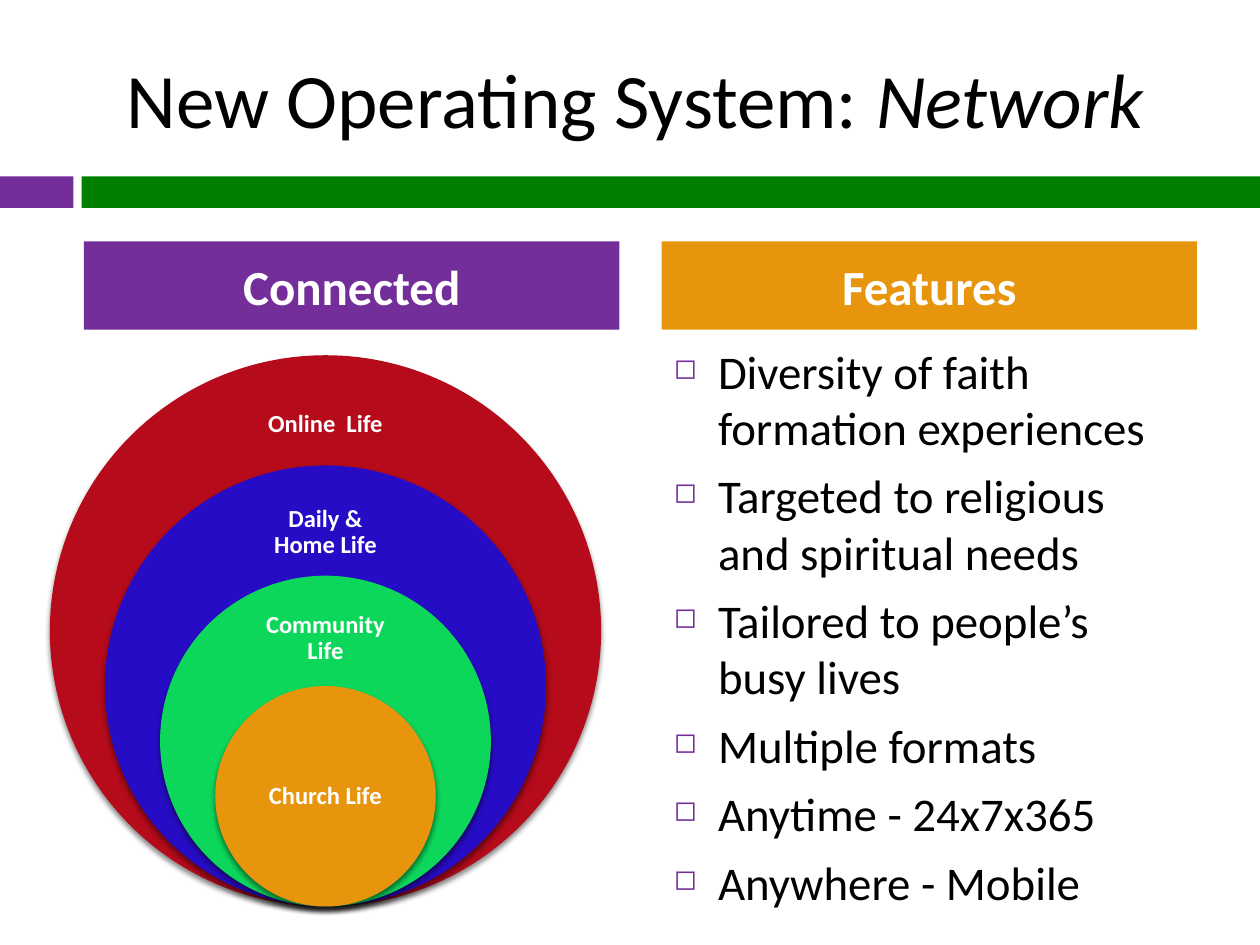
from lxml import etree
from pptx import Presentation
from pptx.dml.color import RGBColor
from pptx.enum import shapes, text
from pptx.oxml import parse_xml
from pptx.oxml.ns import nsdecls, qn
from pptx.util import Pt

PURPLE = RGBColor(0x73, 0x2E, 0x9A)
GREEN = RGBColor(0x00, 0x80, 0x00)
ORANGE = RGBColor(0xE8, 0x95, 0x0E)
RED = RGBColor(0xB5, 0x0B, 0x1B)
BLUE = RGBColor(0x27, 0x0C, 0xC6)
LIME = RGBColor(0x0D, 0xD7, 0x5A)
BLACK = RGBColor(0, 0, 0)
WHITE = RGBColor(0xFF, 0xFF, 0xFF)

deck = Presentation()
deck.slide_width, deck.slide_height = Pt(720), Pt(540)
page = deck.slides.add_slide(deck.slide_layouts[6])


def add_filled(kind, left, top, width, height, color):
    shape = page.shapes.add_shape(kind, Pt(left), Pt(top), Pt(width), Pt(height))
    shape.shadow.inherit = False
    shape.fill.solid()
    shape.fill.fore_color.rgb = color
    shape.line.fill.background()
    return shape


def write(shape, content, size, color, bold=False, align=text.PP_ALIGN.CENTER):
    frame = shape.text_frame
    frame.word_wrap = True
    frame.vertical_anchor = text.MSO_ANCHOR.MIDDLE
    frame.text = content
    for para in frame.paragraphs:
        para.alignment = align
        for span in para.runs:
            span.font.name = "Calibri"
            span.font.size = Pt(size)
            span.font.bold = bold
            span.font.color.rgb = color
    return frame


RECT = shapes.MSO_SHAPE.RECTANGLE
add_filled(RECT, 0, 100.8, 42, 18, PURPLE)
add_filled(RECT, 46.6, 100.8, 673.4, 18, GREEN)

title = page.shapes.add_textbox(Pt(42), Pt(21.6), Pt(642), Pt(68.4))
para = write(title, "New Operating System: ", 44, BLACK).paragraphs[0]
span = para.add_run()
span.text = "Network"
span.font.name = "Calibri"
span.font.size = Pt(44)
span.font.italic = True
span.font.color.rgb = BLACK

CENTER_X, BOTTOM, LARGEST = 186, 518, 315
rings = [
    ("Online  Life", RED, 219, 47.5),
    ("Daily & Home Life", BLUE, 281.7, 45),
    ("Community Life", LIME, 343.5, 42.5),
    ("Church Life", ORANGE, 423.5, 63),
]
for index, (label, color, label_top, label_height) in enumerate(rings):
    size = LARGEST * (1 - 0.2 * index)
    ring = add_filled(shapes.MSO_SHAPE.OVAL, CENTER_X - size / 2, BOTTOM - size, size, size, color)
    effects = ring._element.spPr.find(qn("a:effectLst"))
    effects.append(parse_xml(
        f'<a:outerShdw {nsdecls("a")} blurRad="{Pt(3)}" dist="{Pt(2.4)}" dir="5400000" rotWithShape="0">'
        '<a:srgbClr val="000000"><a:alpha val="45000"/></a:srgbClr></a:outerShdw>'))
    box = page.shapes.add_textbox(Pt(CENTER_X - 44), Pt(label_top), Pt(88), Pt(label_height))
    frame = write(box, label, 14, WHITE, True)
    frame.margin_left = frame.margin_right = frame.margin_top = frame.margin_bottom = Pt(7.8)
    frame.paragraphs[0].line_spacing = 0.9

features = [
    "Diversity of faith formation experiences",
    "Targeted to religious and spiritual needs",
    "Tailored to people’s busy lives",
    "Multiple formats",
    "Anytime - 24x7x365",
    "Anywhere - Mobile",
]
listing = page.shapes.add_textbox(Pt(378), Pt(192), Pt(306), Pt(326))
frame = write(listing, "\n".join(features), 26.8, BLACK, align=text.PP_ALIGN.LEFT)
frame.vertical_anchor = text.MSO_ANCHOR.TOP
for para in frame.paragraphs:
    para.space_before = Pt(7)
    props = para._p.get_or_add_pPr()
    props.set("marL", str(Pt(25.2)))
    props.set("indent", str(-Pt(25.2)))
    bullet_color = etree.SubElement(props, qn("a:buClr"))
    etree.SubElement(bullet_color, qn("a:srgbClr"), val=str(PURPLE))
    etree.SubElement(props, qn("a:buSzPct"), val="60000")
    etree.SubElement(props, qn("a:buChar"), char="◻")

for label, left, color in [("Connected", 48, PURPLE), ("Features", 378, ORANGE)]:
    header = add_filled(RECT, left, 138, 306, 50.4, color)
    write(header, label, 28, WHITE, True).paragraphs[0].space_before = Pt(7)

deck.save("out.pptx")
